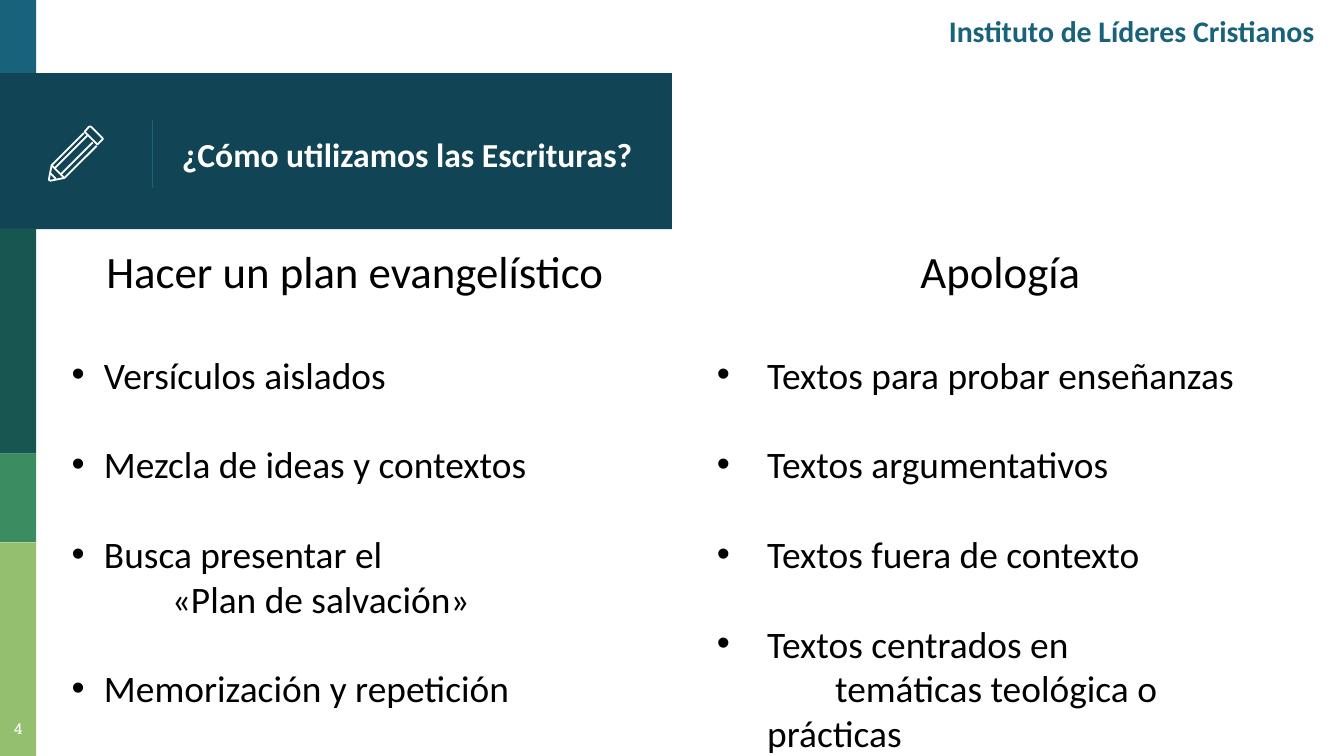
from dataclasses import dataclass

from lxml.etree import SubElement
from pptx import Presentation
from pptx.dml.color import RGBColor
from pptx.enum.shapes import MSO_CONNECTOR as Connector, MSO_SHAPE as Shape
from pptx.enum.text import MSO_ANCHOR as Anchor, PP_ALIGN as Align
from pptx.oxml.ns import qn
from pptx.util import Pt

PX = 4572  # EMU in one px, 200 px to the inch


@dataclass(frozen=True)
class Theme:
    blue: str = "18637B"
    navy: str = "114454"
    teal: str = "165751"
    green: str = "3B8D61"
    lime: str = "94BF6E"
    white: str = "FFFFFF"
    black: str = "000000"
    body_font: str = "Calibri"
    number_font: str = "Roboto Slab"
    bullet_font: str = "Arial"
    heading: int = 24
    item: int = 20
    title: int = 18
    header: int = 16
    number: int = 8
    heading_gap: int = 29
    item_gap: int = 24


class SlideBuilder:
    def __init__(self, slide, theme):
        self.slide = slide
        self.theme = theme

    def bar(self, x, y, w, h, color):
        bar = self.slide.shapes.add_shape(Shape.RECTANGLE, x * PX, y * PX, w * PX, h * PX)
        bar.shadow.inherit = False
        bar.fill.solid()
        bar.fill.fore_color.rgb = RGBColor.from_string(color)
        bar.line.fill.background()

    def line(self, x1, y1, x2, y2, color, width):
        line = self.slide.shapes.add_connector(
            Connector.STRAIGHT, x1 * PX, y1 * PX, x2 * PX, y2 * PX)
        line.line.color.rgb = RGBColor.from_string(color)
        line.line.width = Pt(width)
        SubElement(line._element.spPr, qn("a:effectLst"))

    def icon(self, strokes, color, width):
        group = self.slide.shapes.add_group_shape()
        for points, closed in strokes:
            pen = group.shapes.build_freeform(*points[0], scale=PX)
            pen.add_line_segments(points[1:], close=closed)
            stroke = pen.convert_to_shape()
            stroke.shadow.inherit = False
            stroke.fill.background()
            stroke.line.color.rgb = RGBColor.from_string(color)
            stroke.line.width = Pt(width)

    def frame(self, x, y, w, h, anchor=Anchor.TOP, top_inset=20):
        frame = self.slide.shapes.add_textbox(x * PX, y * PX, w * PX, h * PX).text_frame
        frame.word_wrap = True
        frame.vertical_anchor = anchor
        frame.margin_left = frame.margin_right = frame.margin_bottom = 20 * PX
        frame.margin_top = top_inset * PX
        return frame

    def style(self, paragraph, size, color, bold=False, font=None):
        paragraph.font.name = font or self.theme.body_font
        paragraph.font.size = Pt(size)
        paragraph.font.bold = bold
        paragraph.font.color.rgb = RGBColor.from_string(color)

    def label(self, box, text, size, color, align=Align.LEFT, bold=False, font=None, **layout):
        paragraph = self.frame(*box, **layout).paragraphs[0]
        paragraph.text = text
        paragraph.alignment = align
        self.style(paragraph, size, color, bold, font)

    def column(self, box, heading, items, hang):
        """A centred heading over bullets; an item's second line is set further in."""
        theme = self.theme
        frame = self.frame(*box)
        top = frame.paragraphs[0]
        top.text = heading
        top.alignment = Align.CENTER
        top.space_after = Pt(theme.heading_gap)
        self.style(top, theme.heading, theme.black)
        for number, lines in enumerate(items):
            for row, text in enumerate(lines):
                paragraph = frame.add_paragraph()
                paragraph.text = text
                props = paragraph._p.get_or_add_pPr()
                props.set("marL", str(hang * PX))
                props.set("indent", str((101 if row else -hang) * PX))
                if row == 0:
                    bullet_color = SubElement(props, qn("a:buClr"))
                    SubElement(bullet_color, qn("a:srgbClr"), val=theme.black)
                    SubElement(props, qn("a:buFont"), typeface=theme.bullet_font)
                    SubElement(props, qn("a:buChar"), char="•")
                    if number:
                        paragraph.space_before = Pt(theme.item_gap)
                self.style(paragraph, theme.item, theme.black)


def main():
    theme = Theme()
    deck = Presentation()
    deck.slide_width, deck.slide_height = 2000 * PX, 1125 * PX
    page = SlideBuilder(deck.slides.add_slide(deck.slide_layouts[6]), theme)

    # Side stripe and title band
    for y, w, h, color in (
        (0, 54, 116, theme.blue),
        (109, 1000, 232, theme.navy),
        (340, 54, 335, theme.teal),
        (675, 54, 132, theme.green),
        (807, 54, 318, theme.lime),
    ):
        page.bar(0, y, w, h, color)
    page.line(227, 178, 227, 280, theme.blue, 0.75)
    page.label((251, 117, 750, 224), "¿Cómo utilizamos las Escrituras?",
               theme.title, theme.white, bold=True, anchor=Anchor.MIDDLE)

    # Pencil
    eraser = [(153, 206), (136, 189), (134, 188), (132, 189), (126, 196),
              (145, 215), (152, 208), (153, 207)]
    body = [(125, 198), (77, 246), (73, 266), (73, 268), (75, 269),
            (95, 265), (97, 264), (144, 217)]
    page.icon([
        (eraser, True),
        ([(138, 212), (90, 260)], False),
        (body, False),
        ([(82, 250), (130, 202)], False),
        ([(83, 266), (75, 258)], False),
        ([(77, 246), (96, 265)], False),
    ], theme.white, 0.96)

    # Slide number and header
    page.label((-11, 1054, 76, 70), "4", theme.number, theme.white,
               Align.CENTER, font=theme.number_font, top_inset=27)
    page.label((1236, 12, 740, 122), "Instituto de Líderes Cristianos", theme.header,
               theme.blue, Align.RIGHT, bold=True, top_inset=7)

    # Two columns
    page.column((1047, 343, 898, 660), "Apología ", [
        ["Textos para probar enseñanzas"],
        ["Textos argumentativos"],
        ["Textos fuera de contexto"],
        ["Textos centrados en", "temáticas teológica o prácticas"],
    ], hang=75)
    page.column((87, 343, 882, 660), "Hacer un plan evangelístico", [
        ["Versículos aislados"],
        ["Mezcla de ideas y contextos"],
        ["Busca presentar el", "«Plan de salvación»"],
        ["Memorización y repetición"],
    ], hang=48)

    deck.save("out.pptx")


if __name__ == "__main__":
    main()
